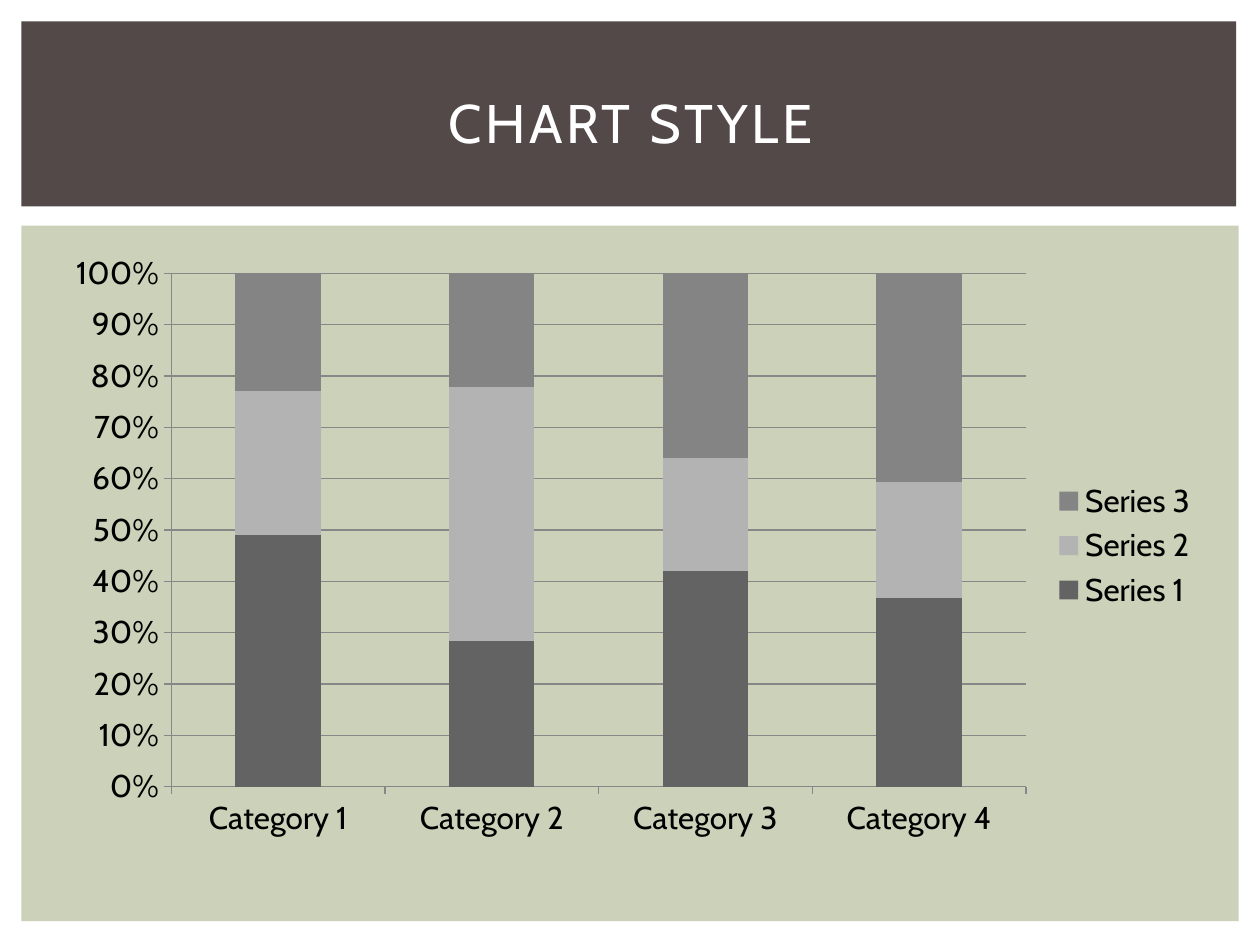
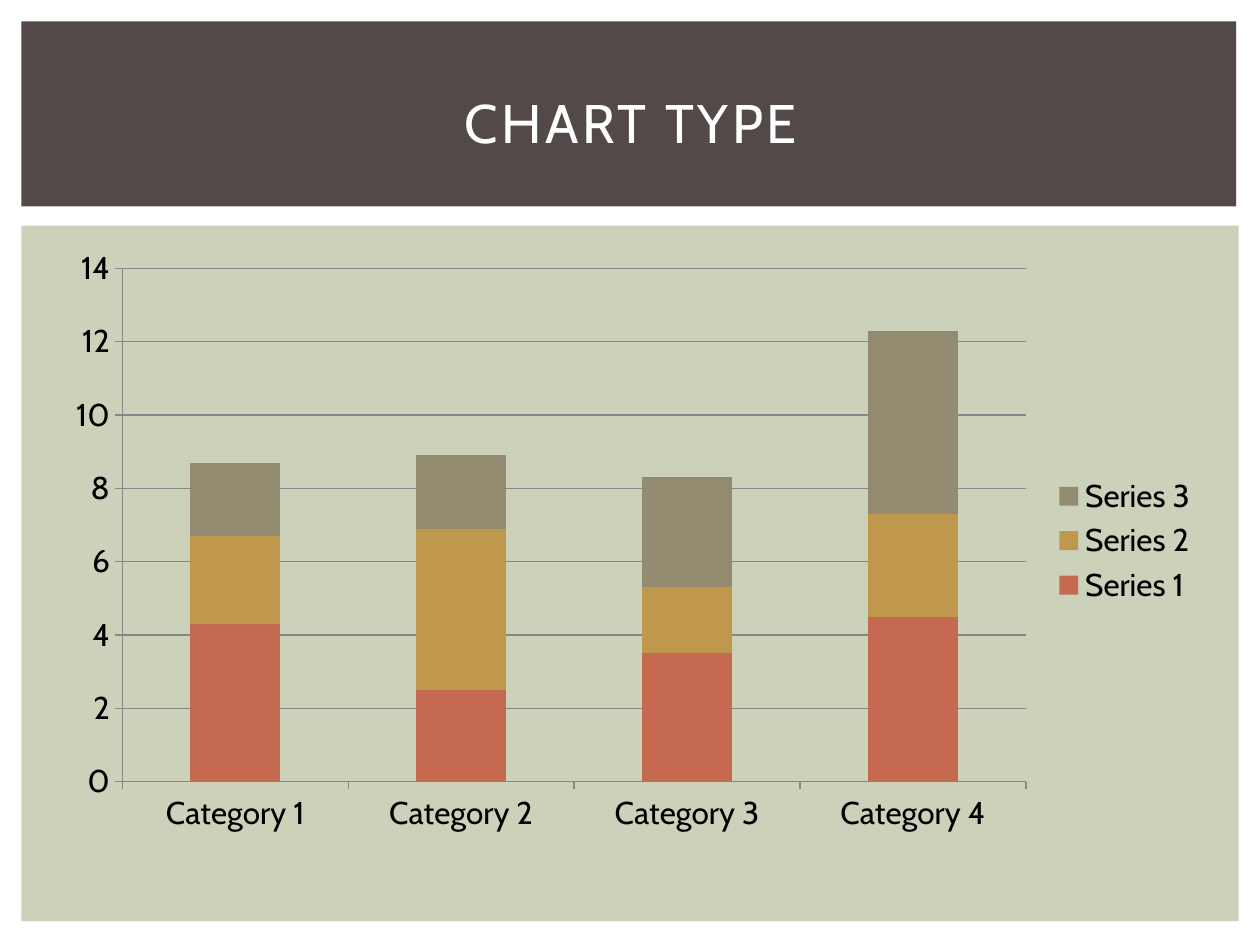
from dataclasses import dataclass

from pptx import Presentation
from pptx.chart.data import CategoryChartData
from pptx.dml.color import RGBColor
from pptx.enum.chart import XL_CHART_TYPE, XL_LEGEND_POSITION, XL_TICK_MARK
from pptx.enum.shapes import MSO_SHAPE
from pptx.enum.text import MSO_ANCHOR, PP_ALIGN
from pptx.slide import Slide
from pptx.util import Cm, Pt

FONT = "Cabin"
WHITE, BLACK = "FFFFFF", "000000"
BROWN, SAGE, AXIS_GREY = "534949", "CCD1B9", "878787"
CATEGORIES = ["Category 1", "Category 2", "Category 3", "Category 4"]


@dataclass
class Box:
    left: float
    top: float
    width: float
    height: float

    def lengths(self) -> list[Cm]:
        return [Cm(v) for v in (self.left, self.top, self.width, self.height)]


@dataclass
class ChartSlide:
    title: str
    chart_type: XL_CHART_TYPE
    chart_box: Box
    number_format: str
    colors: list[str]
    values: list[list[float]]


PANEL = Box(0.43, 4.55, 24.54, 14.02)
TITLE_BAND = Box(0.43, 0.43, 24.49, 3.73)
TITLE = Box(1.07, 0.99, 23.29, 2.92)

CHART_SLIDES = [
    ChartSlide(
        "CHART STYLE", XL_CHART_TYPE.COLUMN_STACKED_100,
        Box(1.07, 4.88, 23.34, 12.24), "0%",
        ["636363", "B3B3B3", "848484"],
        [[49, 28, 42, 37], [28, 49, 22, 23], [23, 22, 36, 41]],
    ),
    ChartSlide(
        "CHART TYPE", XL_CHART_TYPE.COLUMN_STACKED,
        Box(1.07, 4.78, 23.34, 12.24), "General",
        ["C66951", "BF974D", "928B70"],
        [[4.3, 2.5, 3.5, 4.5], [2.4, 4.4, 1.8, 2.8], [2, 2, 3, 5]],
    ),
]


def rgb(color: str) -> RGBColor:
    return RGBColor.from_string(color)


def paint(target, color: str) -> None:
    """Give a shape or chart format a solid fill and no outline."""
    target.fill.solid()
    target.fill.fore_color.rgb = rgb(color)
    target.line.fill.background()


def style_line(line) -> None:
    line.color.rgb = rgb(AXIS_GREY)
    line.width = Pt(0.75)


def add_block(s: Slide, box: Box, color: str) -> None:
    sp = s.shapes.add_shape(MSO_SHAPE.RECTANGLE, *box.lengths())
    sp.shadow.inherit = False
    paint(sp, color)


def add_title(s: Slide, text: str) -> None:
    tf = s.shapes.add_textbox(*TITLE.lengths()).text_frame
    tf.word_wrap = True
    tf.vertical_anchor = MSO_ANCHOR.MIDDLE
    p = tf.paragraphs[0]
    p.alignment = PP_ALIGN.CENTER
    r = p.add_run()
    r.text = text
    r.font.name = FONT
    r.font.size = Pt(31)
    r.font.color.rgb = rgb(WHITE)
    r._r.get_or_add_rPr().set("spc", "200")


def add_stacked_chart(s: Slide, item: ChartSlide) -> None:
    data = CategoryChartData()
    data.categories = CATEGORIES
    for number, values in enumerate(item.values, start=1):
        data.add_series(f"Series {number}", values)
    chart = s.shapes.add_chart(item.chart_type, *item.chart_box.lengths(), data).chart

    chart.has_title = False
    chart.font.name = FONT
    chart.font.size = Pt(18)
    chart.font.color.rgb = rgb(BLACK)
    chart.has_legend = True
    chart.legend.position = XL_LEGEND_POSITION.RIGHT
    chart.legend.include_in_layout = False

    plot = chart.plots[0]
    plot.gap_width = 150
    plot.overlap = 100
    plot.vary_by_categories = False
    for series, color in zip(plot.series, item.colors):
        paint(series.format, color)

    for axis in (chart.category_axis, chart.value_axis):
        axis.major_tick_mark = XL_TICK_MARK.OUTSIDE
        axis.minor_tick_mark = XL_TICK_MARK.NONE
        style_line(axis.format.line)
    chart.value_axis.has_major_gridlines = True
    style_line(chart.value_axis.major_gridlines.format.line)
    labels = chart.value_axis.tick_labels
    labels.number_format = item.number_format
    labels.number_format_is_linked = False


def main() -> None:
    prs = Presentation()
    prs.slide_width, prs.slide_height = Cm(25.4), Cm(19.05)
    for item in CHART_SLIDES:
        s = prs.slides.add_slide(prs.slide_layouts[6])
        s.background.fill.solid()
        s.background.fill.fore_color.rgb = rgb(WHITE)
        add_block(s, PANEL, SAGE)
        add_block(s, TITLE_BAND, BROWN)
        add_stacked_chart(s, item)
        add_title(s, item.title)
    prs.save("out.pptx")


if __name__ == "__main__":
    main()
